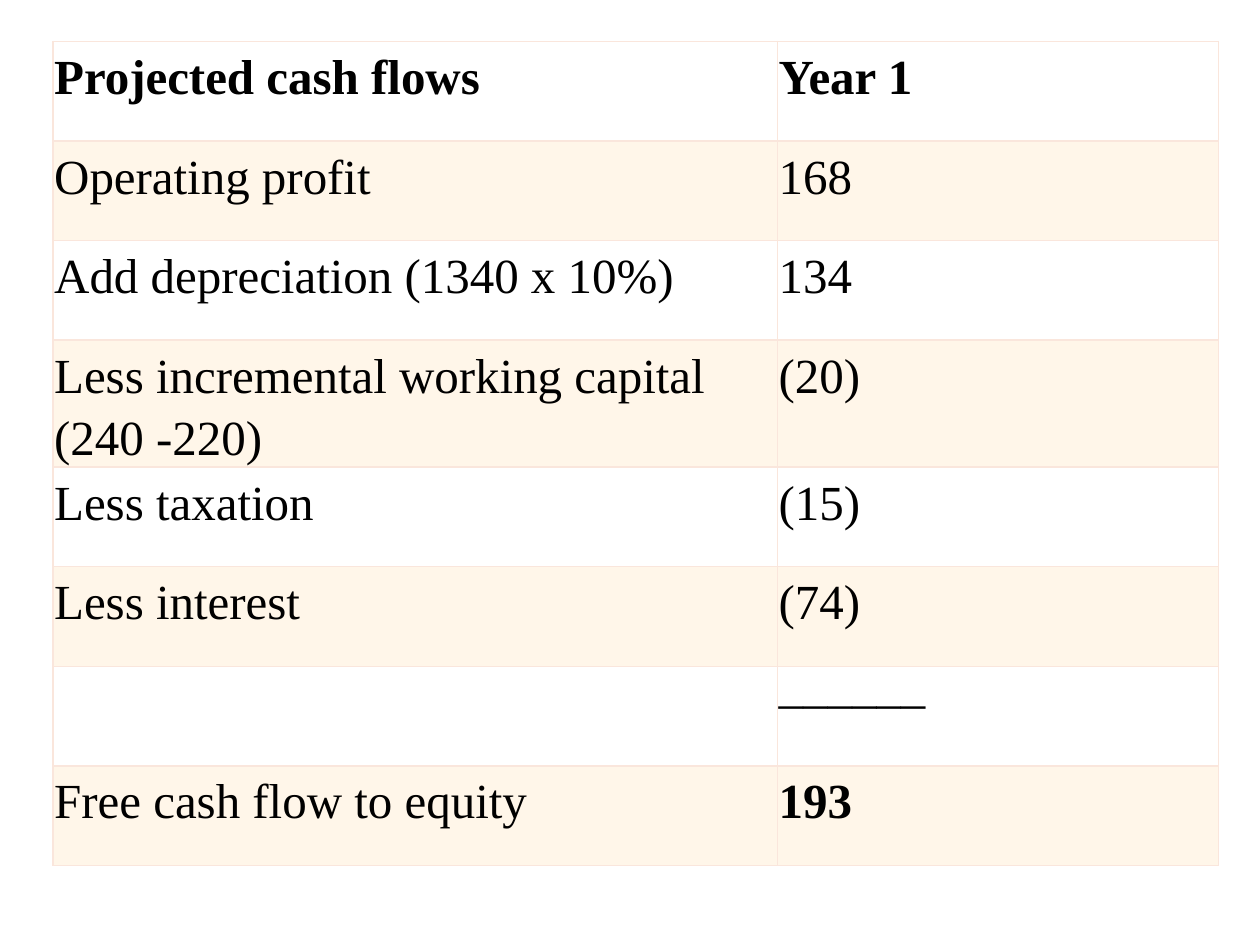
from dataclasses import dataclass

from lxml.etree import SubElement
from pptx import Presentation
from pptx.dml.color import RGBColor
from pptx.oxml.ns import qn
from pptx.util import Inches, Pt


@dataclass(frozen=True)
class Theme:
    font: str = "Times New Roman"
    size: int = 28
    text: str = "000000"
    band: str = "FFF6E9"
    plain: str = "FFFFFF"
    border: str = "FAE6DC"
    border_width: int = 1


THEME = Theme()
COLUMN_WIDTHS = (5.75, 3.5)
ROW_HEIGHT = 0.79
CASH_FLOWS = [
    ("Projected cash flows", "Year 1"),
    ("Operating profit", "168"),
    ("Add depreciation (1340 x 10%)", "134"),
    ("Less incremental working capital (240 -220)", "(20)"),
    ("Less taxation", "(15)"),
    ("Less interest", "(74)"),
    ("", "––––––"),
    ("Free cash flow to equity", "193"),
]


def set_borders(cell):
    tc_pr = cell._tc.get_or_add_tcPr()
    for side in ("a:lnL", "a:lnR", "a:lnT", "a:lnB"):
        ln = SubElement(tc_pr, qn(side), w=str(Pt(THEME.border_width)))
        fill = SubElement(ln, qn("a:solidFill"))
        SubElement(fill, qn("a:srgbClr"), val=THEME.border)


def fill_cell(cell, text, color, bold):
    set_borders(cell)
    cell.fill.solid()
    cell.fill.fore_color.rgb = RGBColor.from_string(color)
    cell.margin_left = cell.margin_right = Inches(0.01)
    cell.margin_top = cell.margin_bottom = Inches(0.01)
    cell.text_frame.text = text
    p = cell.text_frame.paragraphs[0]
    p.line_spacing = 1.15
    for r in p.runs:
        r.font.name = THEME.font
        r.font.size = Pt(THEME.size)
        r.font.bold = bold
        r.font.color.rgb = RGBColor.from_string(THEME.text)


def add_cash_flow_table(s):
    rows, cols = len(CASH_FLOWS), len(COLUMN_WIDTHS)
    table = s.shapes.add_table(
        rows, cols, Inches(0.42), Inches(0.33),
        Inches(sum(COLUMN_WIDTHS)), Inches(rows * ROW_HEIGHT),
    ).table
    for column, width in zip(table.columns, COLUMN_WIDTHS):
        column.width = Inches(width)
    for i, values in enumerate(CASH_FLOWS):
        table.rows[i].height = Inches(ROW_HEIGHT)
        color = THEME.band if i % 2 else THEME.plain
        for j, text in enumerate(values):
            is_total = i == rows - 1 and j == cols - 1
            fill_cell(table.cell(i, j), text, color, i == 0 or is_total)


def main():
    prs = Presentation()
    prs.slide_width, prs.slide_height = Inches(10), Inches(7.5)
    s = prs.slides.add_slide(prs.slide_layouts[6])
    add_cash_flow_table(s)
    prs.save("out.pptx")


if __name__ == "__main__":
    main()
